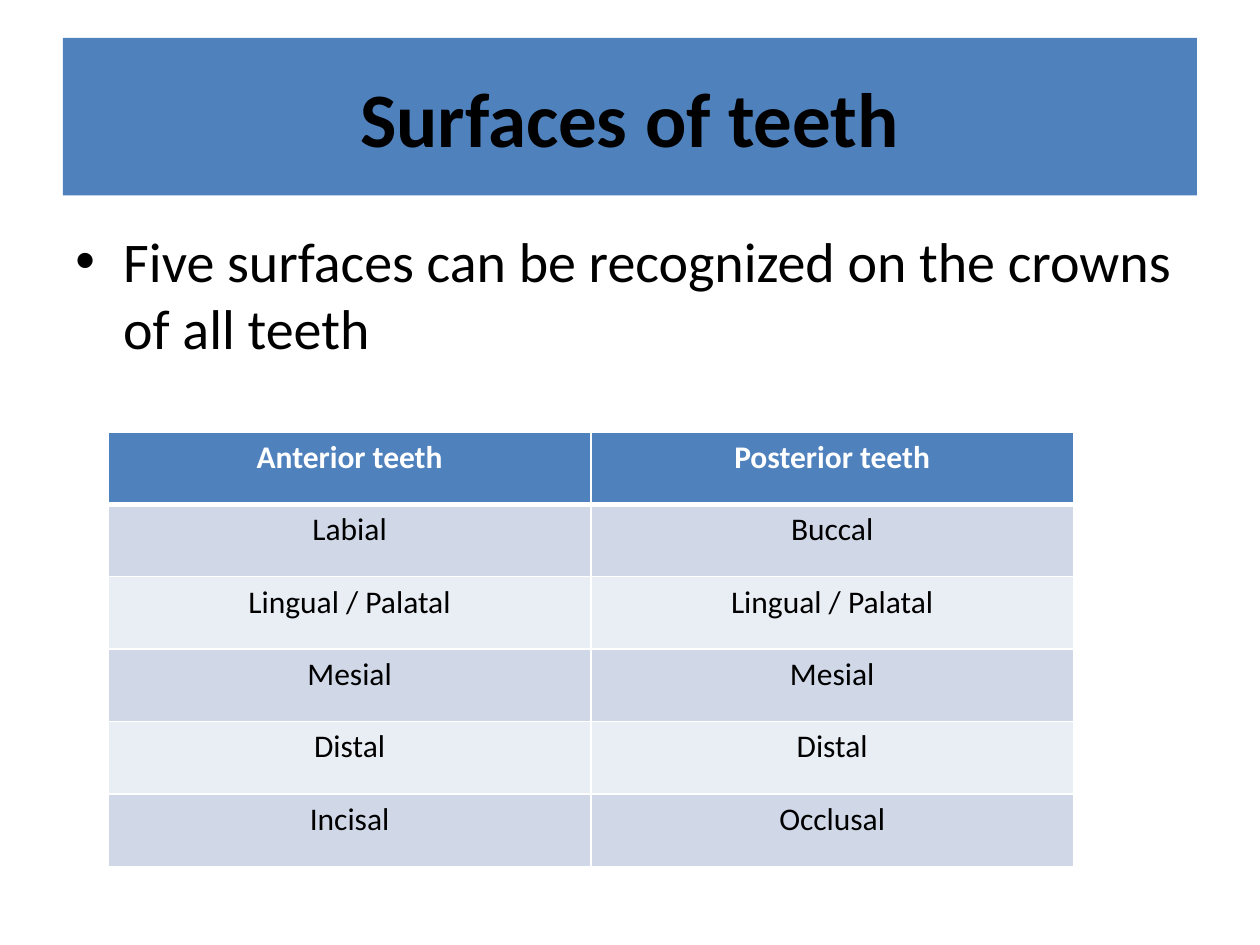
"""Build a slide that lists the surfaces of anterior and posterior teeth."""
import lxml.etree
import pptx
import pptx.dml.color
import pptx.enum.shapes
import pptx.enum.text
import pptx.oxml.ns
import pptx.util

RGBColor = pptx.dml.color.RGBColor
BLUE = RGBColor(0x4F, 0x81, 0xBD)
BAND_DARK = RGBColor(0xD0, 0xD8, 0xE8)
BAND_LIGHT = RGBColor(0xE9, 0xED, 0xF4)
BLACK = RGBColor(0, 0, 0)
WHITE = RGBColor(0xFF, 0xFF, 0xFF)

FONT = "Calibri"
WIDTH, HEIGHT = pptx.util.Inches(10), pptx.util.Inches(7.5)
MARGIN = 0.05
CENTER = pptx.enum.text.PP_ALIGN.CENTER
TEETH_SURFACES = [
    ("Anterior teeth", "Posterior teeth"),
    ("Labial", "Buccal"),
    ("Lingual / Palatal", "Lingual / Palatal"),
    ("Mesial", "Mesial"),
    ("Distal", "Distal"),
    ("Incisal", "Occlusal"),
]


def place(left, top, width, height):
    """Turn shares of the slide's size into lengths."""
    return int(left * WIDTH), int(top * HEIGHT), int(width * WIDTH), int(height * HEIGHT)


def add_child(parent, tag, **attributes):
    """Append a DrawingML element and return it."""
    return lxml.etree.SubElement(parent, pptx.oxml.ns.qn(tag), attributes)


def write(text_frame, text, size, color, bold=False, alignment=None):
    """Fill a text frame with one formatted paragraph and return it."""
    text_frame.text = text
    paragraph = text_frame.paragraphs[0]
    paragraph.alignment = alignment
    font = paragraph.runs[0].font
    font.name, font.size, font.bold = FONT, pptx.util.Pt(size), bold
    font.color.rgb = color
    return paragraph


def add_title(slide, text):
    """Add the title banner."""
    banner = slide.shapes.add_shape(
        pptx.enum.shapes.MSO_SHAPE.RECTANGLE, *place(MARGIN, 0.04, 1 - 2 * MARGIN, 1 / 6)
    )
    banner.shadow.inherit = False
    banner.fill.solid()
    banner.fill.fore_color.rgb = BLUE
    banner.line.fill.background()
    banner.text_frame.vertical_anchor = pptx.enum.text.MSO_ANCHOR.MIDDLE
    write(banner.text_frame, text, 44, BLACK, True, CENTER)


def add_bullet(slide, text):
    """Add the body text as a bullet with a hanging indent."""
    box = slide.shapes.add_textbox(*place(MARGIN, 0.233, 1 - 2 * MARGIN, 0.66))
    box.text_frame.word_wrap = True
    paragraph = write(box.text_frame, text, 32, BLACK)
    properties = paragraph._p.get_or_add_pPr()
    indent = pptx.util.Inches(0.38)
    properties.set("marL", str(indent))
    properties.set("indent", str(-indent))
    add_child(properties, "a:buFont", typeface="Arial")
    add_child(properties, "a:buChar", char="•")


def set_borders(cell, top, bottom):
    """Draw white cell borders with the given top and bottom widths in points."""
    properties = cell._tc.get_or_add_tcPr()
    for side, width in (("L", 1), ("R", 1), ("T", top), ("B", bottom)):
        line = add_child(properties, f"a:ln{side}", w=str(pptx.util.Pt(width)))
        fill = add_child(line, "a:solidFill")
        add_child(fill, "a:srgbClr", val=str(WHITE))


def add_surface_table(slide, rows):
    """Add the table with a header row and banded rows."""
    frame = slide.shapes.add_table(
        len(rows), len(rows[0]), *place(0.086, 0.457, 0.766, 0.46)
    )
    for row, labels in enumerate(rows):
        header = row == 0
        band = BAND_DARK if row % 2 else BAND_LIGHT
        for column, label in enumerate(labels):
            cell = frame.table.cell(row, column)
            set_borders(cell, 3 if row == 1 else 1, 3 if header else 1)
            cell.fill.solid()
            cell.fill.fore_color.rgb = BLUE if header else band
            write(cell.text_frame, label, 18, WHITE if header else BLACK, header, CENTER)


def main():
    """Create the presentation and save it."""
    presentation = pptx.Presentation()
    presentation.slide_width, presentation.slide_height = WIDTH, HEIGHT
    slide = presentation.slides.add_slide(presentation.slide_layouts[6])
    add_title(slide, "Surfaces of teeth")
    add_bullet(slide, "Five surfaces can be recognized on the crowns of all teeth")
    add_surface_table(slide, TEETH_SURFACES)
    presentation.save("out.pptx")


if __name__ == "__main__":
    main()
